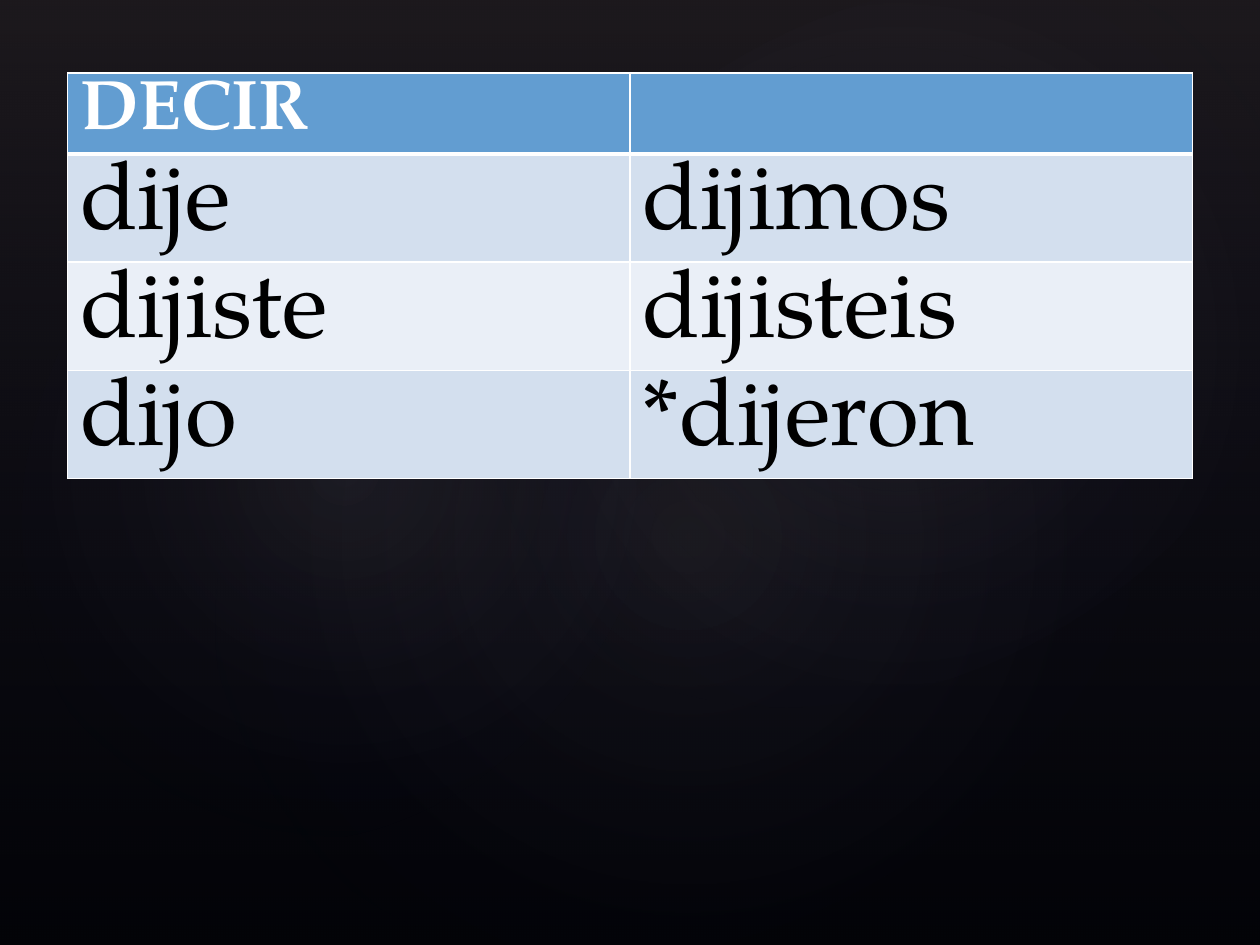
from dataclasses import dataclass

from lxml import etree
from pptx import Presentation
from pptx.dml.color import RGBColor
from pptx.enum.shapes import MSO_SHAPE
from pptx.oxml import parse_xml
from pptx.util import Pt

RECTANGLE = MSO_SHAPE.RECTANGLE
ELLIPSE = MSO_SHAPE.OVAL
DRAWING = "http://schemas.openxmlformats.org/drawingml/2006/main"
LINEAR_DOWN = '<a:lin ang="5400000" scaled="0"/>'
FROM_CENTRE = ('<a:path path="circle"><a:fillToRect l="50000" t="50000" '
               'r="50000" b="50000"/></a:path>')


@dataclass(frozen=True)
class Theme:
    font: str = "TeX Gyre Pagella"
    backdrop: str = "000000"
    haze: str = "504652"
    navy: str = "242852"
    glow: str = "C4BCC6"
    header: str = "629DD1"
    bands: tuple = ("D3DFEE", "EAEFF7")
    border: str = "FFFFFF"
    header_text: str = "FFFFFF"
    body_text: str = "000000"
    header_size: float = 40
    body_size: float = 54
    header_leading: float = 39
    body_leading: float = 54.5


def write_text(frame, text, *, font, size, color, leading, bold=False):
    para = frame.paragraphs[0]
    para.line_spacing = Pt(leading)
    span = para.add_run()
    span.text = text
    span.font.name = font
    span.font.size = Pt(size)
    span.font.bold = bold
    span.font.color.rgb = RGBColor.from_string(color)


class SlideBuilder:
    def __init__(self, page, theme):
        self.page = page
        self.theme = theme
        fill = page.background.fill
        fill.solid()
        fill.fore_color.rgb = RGBColor.from_string(theme.backdrop)

    def gradient_shape(self, kind, frame, stops, direction, rotation=0):
        """Stops are (position, colour, opacity), with percentages."""
        shape = self.page.shapes.add_shape(kind, *map(Pt, frame))
        shape.rotation = rotation
        shape.shadow.inherit = False
        shape.line.fill.background()
        shape.fill.background()
        stop_xml = "".join(
            f'<a:gs pos="{position * 1000}"><a:srgbClr val="{color}">'
            f'<a:alpha val="{opacity * 1000}"/></a:srgbClr></a:gs>'
            for position, color, opacity in stops)
        gradient = parse_xml(
            f'<a:gradFill xmlns:a="{DRAWING}" rotWithShape="1">'
            f'<a:gsLst>{stop_xml}</a:gsLst>{direction}</a:gradFill>')
        properties = shape.element.spPr
        properties.replace(properties.find(f"{{{DRAWING}}}noFill"), gradient)

    def glow(self, frame, opacity, rotation):
        stops = [(0, self.theme.glow, opacity), (58, self.theme.navy, 0)]
        self.gradient_shape(ELLIPSE, frame, stops, FROM_CENTRE, rotation)

    def cell_borders(self, cell, **widths):
        properties = cell._tc.get_or_add_tcPr()
        for side in "LRTB":
            line = etree.SubElement(properties, f"{{{DRAWING}}}ln{side}",
                                    w=str(Pt(widths.get(side, 1))))
            fill = etree.SubElement(line, f"{{{DRAWING}}}solidFill")
            etree.SubElement(fill, f"{{{DRAWING}}}srgbClr", val=self.theme.border)

    def table(self, left, top, column_width, row_heights, rows):
        theme = self.theme
        table = self.page.shapes.add_table(
            len(rows), len(rows[0]), Pt(left), Pt(top),
            Pt(column_width * len(rows[0])), Pt(sum(row_heights))).table
        for column in table.columns:
            column.width = Pt(column_width)
        header_format = dict(size=theme.header_size, color=theme.header_text,
                             leading=theme.header_leading, bold=True)
        body_format = dict(size=theme.body_size, color=theme.body_text,
                           leading=theme.body_leading)
        for row, texts in enumerate(rows):
            table.rows[row].height = Pt(row_heights[row])
            color = theme.bands[(row - 1) % 2] if row else theme.header
            text_format = body_format if row else header_format
            for column, text in enumerate(texts):
                cell = table.cell(row, column)
                self.cell_borders(cell, T=3 if row == 1 else 1,
                                  B=3 if row == 0 else 1)
                cell.fill.solid()
                cell.fill.fore_color.rgb = RGBColor.from_string(color)
                if text:
                    write_text(cell.text_frame, text, font=theme.font, **text_format)


def main():
    deck = Presentation()
    deck.slide_width, deck.slide_height = Pt(720), Pt(540)
    theme = Theme()
    slide = SlideBuilder(deck.slides.add_slide(deck.slide_layouts[6]), theme)

    slide.gradient_shape(RECTANGLE, (0, 0, 720, 540),
                         [(0, theme.haze, 36), (100, theme.navy, 10)], LINEAR_DOWN)
    slide.glow((108, 82, 570, 449), 7, 328.7)
    slide.glow((-21.6, 92, 436, 353), 8, 294.3)
    slide.glow((258, 9.4, 510.5, 374.4), 8, 328.7)

    slide.table(38.6, 41.8, 321.4, [46.3] + [61.7] * 3, [
        ("DECIR", ""),
        ("dije", "dijimos"),
        ("dijiste", "dijisteis"),
        ("dijo", "*dijeron"),
    ])
    deck.save("out.pptx")


if __name__ == "__main__":
    main()
